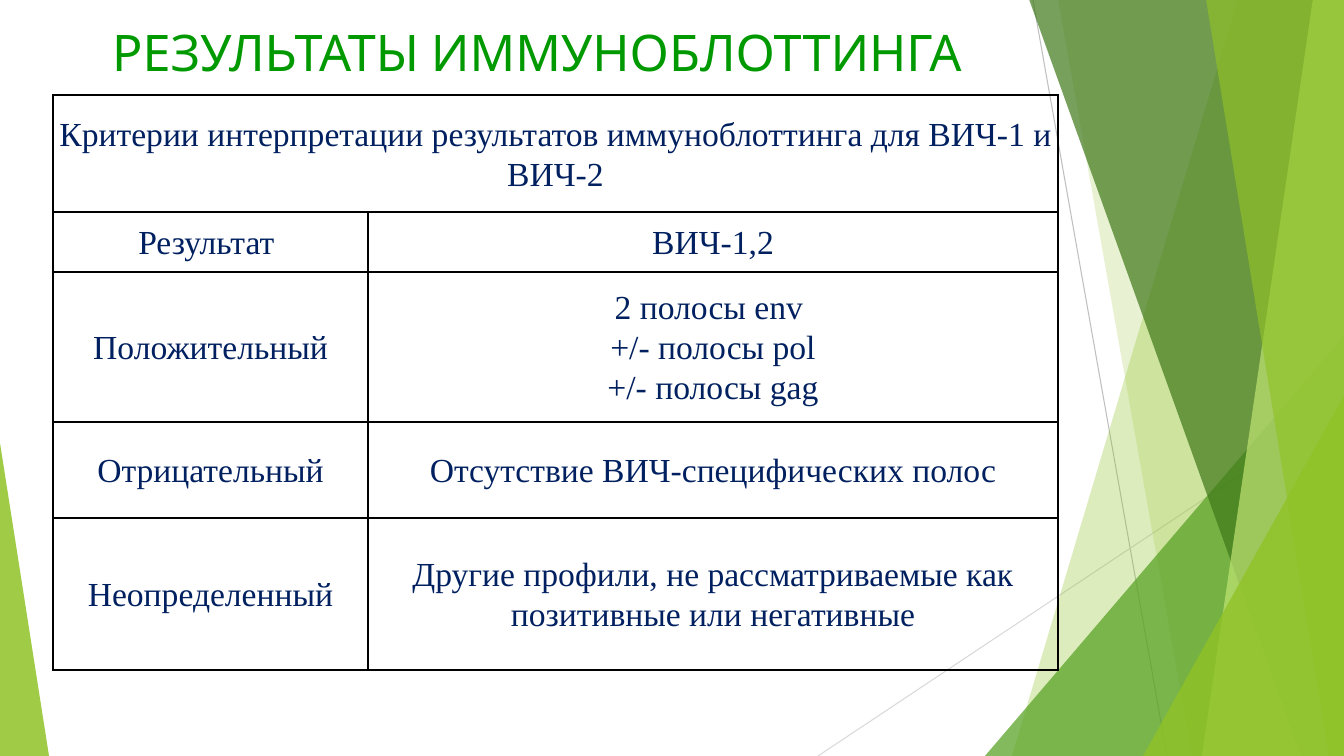
from lxml import etree
from pptx import Presentation
from pptx.dml.color import RGBColor
from pptx.enum.shapes import MSO_CONNECTOR, MSO_SHAPE
from pptx.enum.text import MSO_ANCHOR, MSO_AUTO_SIZE, PP_ALIGN
from pptx.oxml.ns import qn
from pptx.util import Pt

STRAIGHT = MSO_CONNECTOR.STRAIGHT
TRIANGLE = MSO_SHAPE.ISOSCELES_TRIANGLE
MIDDLE = MSO_ANCHOR.MIDDLE
NO_AUTOFIT = MSO_AUTO_SIZE.NONE
CENTER = PP_ALIGN.CENTER

WIDTH, HEIGHT = 1344, 756
EMU_PER_PX = 914400 / 100.8
TITLE_ONLY = 5

LIME, GREEN, FOREST, PALE = "90C226", "54A021", "3F7819", "C0E474"
TITLE_GREEN, NAVY, BLACK = "009900", "002060", "000000"

TITLE = "РЕЗУЛЬТАТЫ ИММУНОБЛОТТИНГА"
CRITERIA = [
    ["Критерии интерпретации результатов иммуноблоттинга для ВИЧ-1 и ВИЧ-2", ""],
    ["Результат ", "ВИЧ-1,2"],
    ["Положительный", "2 полосы env \n+/- полосы pol\n+/- полосы gag"],
    ["Отрицательный", "Отсутствие ВИЧ-специфических полос"],
    ["Неопределенный", "Другие профили, не рассматриваемые как позитивные или негативные"],
]


def px(length):
    """Turn pixels into EMU."""
    return round(length * EMU_PER_PX)


def color(hex_string):
    """Turn a hex string into a colour."""
    return RGBColor.from_string(hex_string)


def write(frame, text, *, font, size, ink, spacing=1.0):
    """Write centred text, with a line break at each newline."""
    paragraph = frame.paragraphs[0]
    paragraph.alignment = CENTER
    paragraph.line_spacing = spacing
    for index, line in enumerate(text.split("\n")):
        if index:
            paragraph.add_line_break()
        run = paragraph.add_run()
        run.text = line
        run.font.name = font
        run.font.size = Pt(size)
        run.font.bold = False
        run.font.color.rgb = color(ink)


class SlideBuilder:
    """Holds the style and the current slide."""

    title_font = "Karla"
    table_font = "Times New Roman"
    title_size = 36
    table_size = 24
    cell_inset = 2

    def __init__(self, presentation):
        """Add a title-only slide."""
        self.slide = presentation.slides.add_slide(presentation.slide_layouts[TITLE_ONLY])
        self.shapes = self.slide.shapes

    def title(self, text, left, top, width, height):
        """Place and format the title."""
        heading = self.shapes.title
        heading.left, heading.top = px(left), px(top)
        heading.width, heading.height = px(width), px(height)
        frame = heading.text_frame
        frame.word_wrap = True
        frame.auto_size = NO_AUTOFIT
        frame.vertical_anchor = MIDDLE
        write(frame, text, font=self.title_font, size=self.title_size, ink=TITLE_GREEN)

    def line(self, x1, y1, x2, y2, ink):
        """Draw a thin straight line."""
        ray = self.shapes.add_connector(STRAIGHT, px(x1), px(y1), px(x2), px(y2))
        ray.line.color.rgb = color(ink)
        ray.line.width = Pt(0.75)
        etree.SubElement(ray._element.spPr, qn("a:effectLst"))

    def paint(self, facet, ink, opacity):
        """Give a shape a translucent fill without outline or shadow."""
        facet.shadow.inherit = False
        facet.line.fill.background()
        facet.fill.solid()
        facet.fill.fore_color.rgb = color(ink)
        solid = facet._element.spPr.find(".//" + qn("a:srgbClr"))
        etree.SubElement(solid, qn("a:alpha"), val=str(opacity * 1000))

    def band(self, top_x, bottom_x, ink, opacity):
        """Draw a slanted band that reaches the right edge."""
        outline = self.shapes.build_freeform(top_x, -1, scale=EMU_PER_PX)
        outline.add_line_segments([(WIDTH, -1), (WIDTH, HEIGHT), (bottom_x, HEIGHT)])
        self.paint(outline.convert_to_shape(), ink, opacity)

    def corner(self, left, top, width, apex, ink, opacity):
        """Draw a triangle that stands on the bottom edge."""
        wedge = self.shapes.add_shape(
            TRIANGLE, px(left), px(top), px(width), px(HEIGHT - top))
        wedge.adjustments[0] = apex
        self.paint(wedge, ink, opacity)

    def border(self, cell):
        """Draw a black border on all sides of a cell."""
        properties = cell._tc.get_or_add_tcPr()
        for index, side in enumerate(("lnL", "lnR", "lnT", "lnB")):
            edge = etree.Element(qn("a:" + side), w=str(Pt(1)))
            fill = etree.SubElement(edge, qn("a:solidFill"))
            etree.SubElement(fill, qn("a:srgbClr"), val=BLACK)
            properties.insert(index, edge)

    def table(self, rows, left, top, widths, heights):
        """Draw a bordered table whose first row spans all columns."""
        grid = self.shapes.add_table(
            len(rows), len(widths), px(left), px(top),
            px(sum(widths)), px(sum(heights))).table
        grid.first_row = grid.horz_banding = False
        for column, width in zip(grid.columns, widths):
            column.width = px(width)
        for row, height in zip(grid.rows, heights):
            row.height = px(height)
        grid.cell(0, 0).merge(grid.cell(0, len(widths) - 1))
        for row, texts in zip(grid.rows, rows):
            for cell, text in zip(row.cells, texts):
                cell.fill.background()
                cell.vertical_anchor = MIDDLE
                cell.margin_left = cell.margin_right = px(self.cell_inset)
                cell.margin_top = cell.margin_bottom = px(self.cell_inset)
                self.border(cell)
                if text:
                    write(cell.text_frame, text, font=self.table_font,
                          size=self.table_size, ink=NAVY, spacing=1.07)


def main():
    """Build the slide and save it."""
    presentation = Presentation()
    presentation.slide_width, presentation.slide_height = px(WIDTH), px(HEIGHT)
    builder = SlideBuilder(presentation)

    builder.line(1033, 0, 1167, HEIGHT, "BFBFBF")
    builder.line(WIDTH, 406, 818, HEIGHT, "D9D9D9")
    builder.band(1238, 1012, LIME, 30)
    builder.band(1058, 1192, LIME, 20)
    builder.corner(985, 336, 359, 1, GREEN, 72)
    builder.band(1029, 1301, FOREST, 70)
    builder.band(1313, 1202, PALE, 70)
    builder.band(1206, 1329, LIME, 65)
    builder.corner(1143, 396, 201, 1, LIME, 80)
    builder.corner(0, 443, 49, 0, LIME, 85)

    builder.title(TITLE, 86, 17, 902, 68)
    builder.table(CRITERIA, 53, 95, [315, 690], [117, 60, 150, 96, 152])
    presentation.save("out.pptx")


if __name__ == "__main__":
    main()
